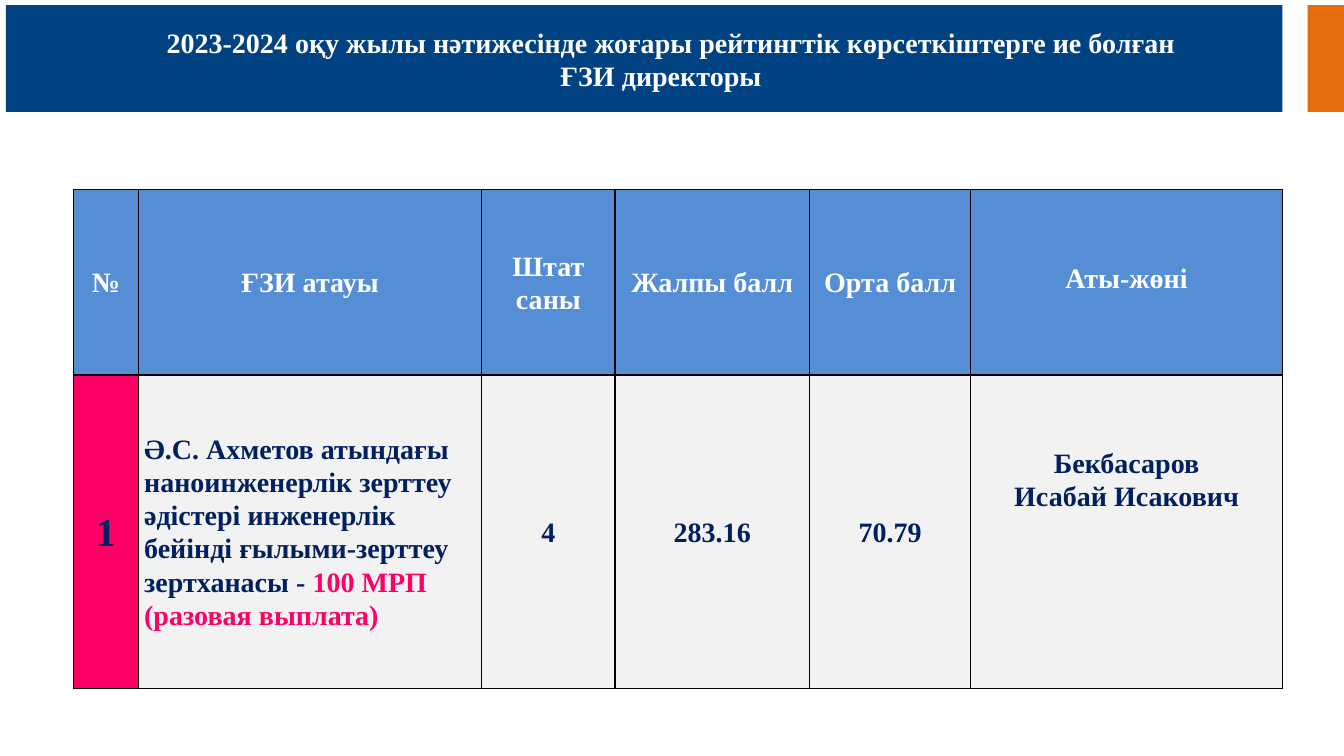
import pptx
import pptx.dml.color
import pptx.enum.shapes
import pptx.enum.text
import pptx.oxml
import pptx.oxml.ns
import pptx.util
from pptx.util import Inches

RGB = pptx.dml.color.RGBColor
ALIGN = pptx.enum.text.PP_ALIGN
ANCHOR = pptx.enum.text.MSO_ANCHOR

NAVY = RGB(0x00, 0x42, 0x82)
ORANGE = RGB(0xE4, 0x6C, 0x0A)
BLUE = RGB(0x55, 0x8E, 0xD5)
PINK = RGB(0xFF, 0x00, 0x66)
GREY = RGB(0xF2, 0xF2, 0xF2)
INK = RGB(0x00, 0x20, 0x60)
WHITE = RGB(0xFF, 0xFF, 0xFF)
FONT = "Times New Roman"

TITLE = ("2023-2024 оқу жылы нәтижесінде жоғары рейтингтік "
         "көрсеткіштерге ие болған ҒЗИ директоры")
LAB = ("Ә.С. Ахметов атындағы наноинженерлік зерттеу әдістері инженерлік "
       "бейінді ғылыми-зерттеу зертханасы - ")
HEADS = ["№", "ҒЗИ атауы", "Штат саны", "Жалпы балл", "Орта балл", "Аты-жөні"]
COLS = [0.64, 3.41, 1.32, 1.93, 1.6, 3.09]
ROWS = [1.84, 3.11]


def add_run(para, text, color, size=20):
    run = para.add_run()
    run.text = text
    font = run.font
    font.name, font.size, font.bold = FONT, pptx.util.Pt(size), True
    font.color.rgb = color


def add_bar(slide, left, top, width, height, color):
    bar = slide.shapes.add_shape(
        pptx.enum.shapes.MSO_SHAPE.RECTANGLE,
        Inches(left), Inches(top), Inches(width), Inches(height))
    bar.shadow.inherit = False
    bar.fill.solid()
    bar.fill.fore_color.rgb = color
    bar.line.fill.background()


def add_header(slide, left, top, width, height):
    # Title band and the accent block at the slide edge
    accent = 0.36
    add_bar(slide, left, top, width - accent - 0.25, height, NAVY)
    add_bar(slide, left + width - accent, top, accent, height, ORANGE)

    # Title text
    box = slide.shapes.add_textbox(
        Inches(left + 1.1), Inches(top + 0.15), Inches(10.79), Inches(1.1))
    box.text_frame.word_wrap = True
    para = box.text_frame.paragraphs[0]
    para.alignment = ALIGN.CENTER
    para._p.get_or_add_pPr().set("indent", str(Inches(0.2)))
    add_run(para, TITLE, WHITE)


def add_edges(cell):
    props = cell._tc.get_or_add_tcPr()
    for spot, side in enumerate(("lnL", "lnR", "lnT", "lnB")):
        props.insert(spot, pptx.oxml.parse_xml(
            f'<a:{side} {pptx.oxml.ns.nsdecls("a")} w="{pptx.util.Pt(0.96)}">'
            '<a:solidFill><a:srgbClr val="000000"/></a:solidFill>'
            f'</a:{side}>'))


def fill_cell(cell, paras, fill, size=20, align=ALIGN.CENTER, named=False):
    # Name cells hang from the top, all others are centred
    cell.fill.solid()
    cell.fill.fore_color.rgb = fill
    cell.vertical_anchor = ANCHOR.TOP if named else ANCHOR.MIDDLE
    cell.margin_left = cell.margin_right = Inches(0.01 if named else 0.06)
    cell.margin_top = Inches(0.71 if named else 0.05)
    cell.margin_bottom = Inches(0.05)
    frame = cell.text_frame
    for index, runs in enumerate(paras):
        para = frame.add_paragraph() if index else frame.paragraphs[0]
        para.alignment, para.line_spacing = align, 1.07
        for text, color in runs:
            add_run(para, text, color, size)
    add_edges(cell)


def add_scores(slide, left, top, width, height):
    frame = slide.shapes.add_table(
        len(ROWS), len(COLS),
        Inches(left), Inches(top), Inches(width), Inches(height))
    table = frame.table
    for col, share in zip(table.columns, COLS):
        col.width = Inches(width * share / sum(COLS))
    for row, share in zip(table.rows, ROWS):
        row.height = Inches(height * share / sum(ROWS))

    # Heading row
    last = len(COLS) - 1
    for col, head in enumerate(HEADS):
        fill_cell(table.cell(0, col), [[(head, WHITE)]], BLUE,
                  named=col == last)

    # Result row
    fill_cell(table.cell(1, 0), [[("1", INK)]], PINK, size=28)
    fill_cell(table.cell(1, 1),
              [[(LAB, INK), ("100 МРП (разовая выплата)", PINK)]],
              GREY, align=ALIGN.LEFT)
    for col, score in enumerate(["4", "283.16", "70.79"], 2):
        fill_cell(table.cell(1, col), [[(score, INK)]], GREY)
    fill_cell(table.cell(1, last),
              [[("Бекбасаров", INK)], [("Исабай Исакович", INK)]],
              GREY, named=True)


def main():
    deck = pptx.Presentation()
    deck.slide_width, deck.slide_height = Inches(13.33), Inches(7.5)
    slide = deck.slides.add_slide(deck.slide_layouts[6])
    add_header(slide, 0.06, 0.05, 13.27, 1.06)
    add_scores(slide, 0.73, 1.88, 11.99, 4.95)
    deck.save("out.pptx")


if __name__ == "__main__":
    main()
